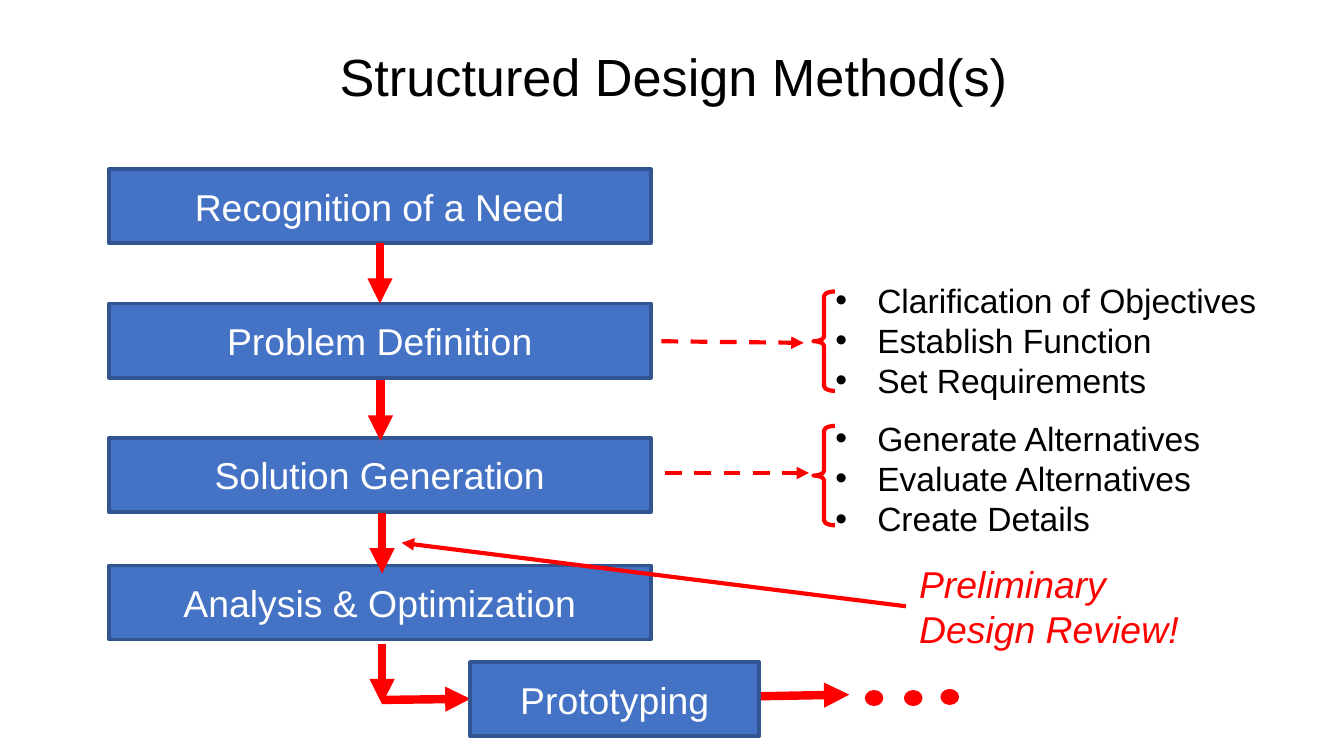
from lxml.etree import SubElement
from pptx import Presentation
from pptx.dml.color import RGBColor
from pptx.enum.dml import MSO_LINE_DASH_STYLE as Dash
from pptx.enum.shapes import MSO_CONNECTOR as Connector, MSO_SHAPE as Shape
from pptx.enum.text import MSO_ANCHOR as Anchor, PP_ALIGN as Align
from pptx.oxml.ns import qn
from pptx.util import Cm, Pt

COLORS = {
    "box": "4472C4",
    "border": "325491",
    "accent": "FF0000",
    "text": "000000",
    "box_text": "FFFFFF",
}
FONT = "Arial"
BOX_HEIGHT = 1.4
STEP_LEFT, STEP_WIDTH = 2.06, 10.24
DOWN_LENGTH = 1.14
BULLET_INDENT = 0.79

# Step label, top of its box, start (x, y) of the arrow below it
STEPS = [
    ("Recognition of a Need", 3.2, (7.18, 4.6)),
    ("Problem Definition", 5.74, (7.19, 7.19)),
    ("Solution Generation", 8.28, (7.22, 9.7)),
    ("Analysis & Optimization", 10.69, (7.22, 12.17)),
]

# Tasks, top of the list, dashed arrow from and to
DETAILS = [
    (["Clarification of Objectives", "Establish Function", "Set Requirements"],
     5.16, (12.5, 6.45), (15.19, 6.48)),
    (["Generate Alternatives", "Evaluate Alternatives", "Create Details"],
     7.77, (12.57, 8.94), (15.29, 8.94)),
]


def rgb(name):
    return RGBColor.from_string(COLORS[name])


def write(frame, lines, size, color, align=Align.LEFT, italic=False):
    frame.word_wrap = True
    frame.text = "\n".join(lines)
    for paragraph in frame.paragraphs:
        paragraph.alignment = align
        for run in paragraph.runs:
            run.font.name = FONT
            run.font.size = Pt(size)
            run.font.italic = italic
            run.font.color.rgb = rgb(color)


def add_text(slide, left, top, width, height, lines, size, color, **style):
    label = slide.shapes.add_textbox(Cm(left), Cm(top), Cm(width), Cm(height))
    write(label.text_frame, lines, size, color, **style)
    return label.text_frame


def add_figure(slide, kind, left, top, width, height, fill, line, weight):
    figure = slide.shapes.add_shape(kind, Cm(left), Cm(top), Cm(width), Cm(height))
    figure.shadow.inherit = False
    if fill:
        figure.fill.solid()
        figure.fill.fore_color.rgb = rgb(fill)
    else:
        figure.fill.background()
    figure.line.color.rgb = rgb(line)
    figure.line.width = Pt(weight)
    return figure


def add_box(slide, label, left, top, width):
    box = add_figure(slide, Shape.RECTANGLE, left, top, width, BOX_HEIGHT,
                     "box", "border", 2)
    box.text_frame.vertical_anchor = Anchor.MIDDLE
    write(box.text_frame, [label], 20, "box_text", align=Align.CENTER)


def add_arrow(slide, start, end, weight, dashed=False):
    points = [Cm(value) for value in (*start, *end)]
    arrow = slide.shapes.add_connector(Connector.STRAIGHT, *points)
    arrow.line.color.rgb = rgb("accent")
    arrow.line.width = Pt(weight)
    if dashed:
        arrow.line.dash_style = Dash.DASH
    properties = arrow.element.spPr
    SubElement(properties.find(qn("a:ln")), qn("a:tailEnd"), type="triangle")
    SubElement(properties, qn("a:effectLst"))


def add_bullets(slide, tasks, top):
    frame = add_text(slide, 15.54, top, 8.61, 2.57, tasks, 18, "text")
    for paragraph in frame.paragraphs:
        properties = paragraph._p.get_or_add_pPr()
        properties.set("marL", str(Cm(BULLET_INDENT)))
        properties.set("indent", str(-Cm(BULLET_INDENT)))
        SubElement(properties, qn("a:buFont"), typeface=FONT)
        SubElement(properties, qn("a:buChar"), char="•")


def add_brace(slide, top):
    brace = add_figure(slide, Shape.LEFT_BRACE, 15.37, top, 0.41, 1.88,
                       None, "accent", 2.25)
    brace.adjustments[0] = 0.218


def main():
    deck = Presentation()
    deck.slide_width, deck.slide_height = Cm(25.4), Cm(14.29)
    slide = deck.slides.add_slide(deck.slide_layouts[6])

    # Title
    add_text(slide, 6.07, 0.71, 13.31, 1.45, ["Structured Design Method(s)"],
             28, "text", align=Align.CENTER)

    # Main steps, then the arrows that lead down from them
    for label, top, _ in STEPS:
        add_box(slide, label, STEP_LEFT, top, STEP_WIDTH)
    for _, _, (x, y) in STEPS:
        add_arrow(slide, (x, y), (x, y + DOWN_LENGTH), 4.5)

    # Prototyping and what follows
    add_arrow(slide, (7.22, 13.23), (8.89, 13.21), 4.5)
    add_box(slide, "Prototyping", 8.89, 12.52, 5.46)
    add_arrow(slide, (14.38, 13.16), (16.05, 13.13), 4.5)
    for left, top in [(16.38, 13.08), (17.12, 13.08), (17.81, 13.06)]:
        add_figure(slide, Shape.OVAL, left, top, 0.28, 0.23,
                   "accent", "accent", 2)

    # Tasks within the steps
    for tasks, top, start, end in DETAILS:
        add_bullets(slide, tasks, top)
        add_arrow(slide, start, end, 2.25, dashed=True)
    for top in (5.51, 8.05):
        add_brace(slide, top)

    # Review callout
    add_text(slide, 17.12, 10.49, 6.15, 1.96, ["Preliminary Design Review!"],
             20, "accent", italic=True)
    add_arrow(slide, (17.12, 11.46), (7.59, 10.26), 2.25)

    deck.save("out.pptx")


if __name__ == "__main__":
    main()
